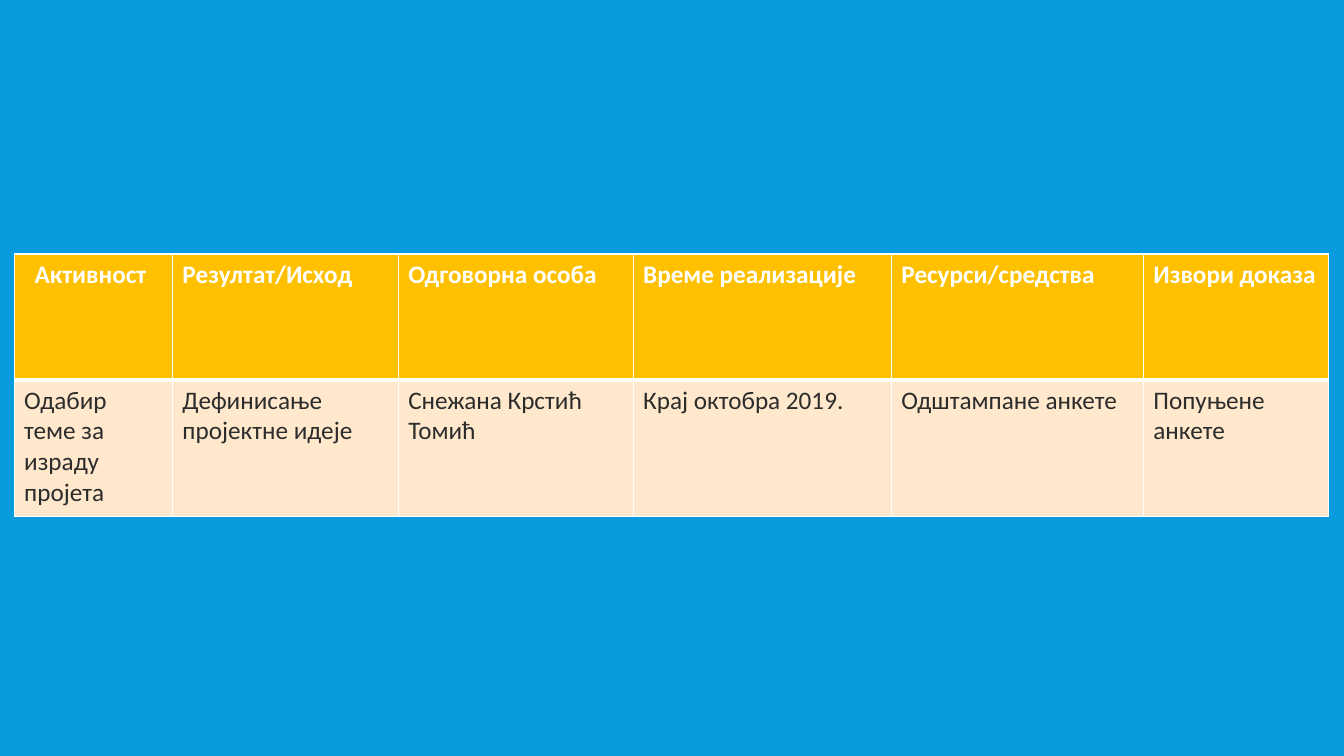
from lxml.etree import SubElement
from pptx import Presentation
from pptx.dml.color import RGBColor
from pptx.enum.text import PP_ALIGN
from pptx.oxml.ns import qn
from pptx.util import Inches, Pt

COLORS = {
    "background": "099BDD",
    "header": "FFC000",
    "body": "FFE8CC",
    "border": "FFFFFF",
    "header_text": "FFFFFF",
    "body_text": "2C2C2C",
}
COL_WIDTHS = [1.57, 2.24, 2.33, 2.56, 2.5, 1.84]
ROW_HEIGHTS = [1.25, 1.35]
ROWS = [
    ["Активност ", "Резултат/Исход", "Одговорна особа",
     "Време реализације", "Ресурси/средства", "Извори доказа"],
    ["Одабир теме за израду пројета", "Дефинисање пројектне идеје",
     "Снежана Крстић Томић", "Крај октобра 2019.",
     "Одштампане анкете", "Попуњене анкете"],
]
ROW_STYLES = [
    {"fill": "header", "color": "header_text", "bold": True,
     "borders": {"L": 1, "R": 1, "T": 1, "B": 3}},
    {"fill": "body", "color": "body_text", "bold": False,
     "borders": {"L": 1, "R": 1, "T": 3, "B": 1}},
]


def rgb(name):
    return RGBColor.from_string(COLORS[name])


def set_borders(cell, borders):
    """Draw solid cell borders; widths in points, keyed by side letter."""
    tc_pr = cell._tc.get_or_add_tcPr()
    for side, width in borders.items():
        ln = SubElement(tc_pr, qn(f"a:ln{side}"), w=str(Pt(width)))
        fill = SubElement(ln, qn("a:solidFill"))
        SubElement(fill, qn("a:srgbClr"), val=COLORS["border"])


def fill_cell(cell, text, style):
    set_borders(cell, style["borders"])
    cell.fill.solid()
    cell.fill.fore_color.rgb = rgb(style["fill"])
    r = cell.text_frame.paragraphs[0].add_run()
    r.text = text
    font = {"name": "Calibri", "size": Pt(18), "bold": style["bold"]}
    for name, value in font.items():
        setattr(r.font, name, value)
    r.font.color.rgb = rgb(style["color"])


def add_plan_table(s, left, top, width, height):
    """Share the box among columns and rows in the given proportions."""
    table = s.shapes.add_table(
        len(ROWS), len(COL_WIDTHS), left, top, width, height).table
    for column, share in zip(table.columns, COL_WIDTHS):
        column.width = int(width * share / sum(COL_WIDTHS))
    for row, share in zip(table.rows, ROW_HEIGHTS):
        row.height = int(height * share / sum(ROW_HEIGHTS))
    for row, texts, style in zip(table.rows, ROWS, ROW_STYLES):
        for cell, text in zip(row.cells, texts):
            fill_cell(cell, text, style)
    table.cell(0, 0).text_frame.paragraphs[0].alignment = PP_ALIGN.CENTER


def main():
    prs = Presentation()
    prs.slide_width, prs.slide_height = Inches(13.33), Inches(7.5)
    s = prs.slides.add_slide(prs.slide_layouts[6])
    s.background.fill.solid()
    s.background.fill.fore_color.rgb = rgb("background")
    add_plan_table(s, Inches(0.14), Inches(2.52),
                   Inches(sum(COL_WIDTHS)), Inches(sum(ROW_HEIGHTS)))
    prs.save("out.pptx")


if __name__ == "__main__":
    main()
